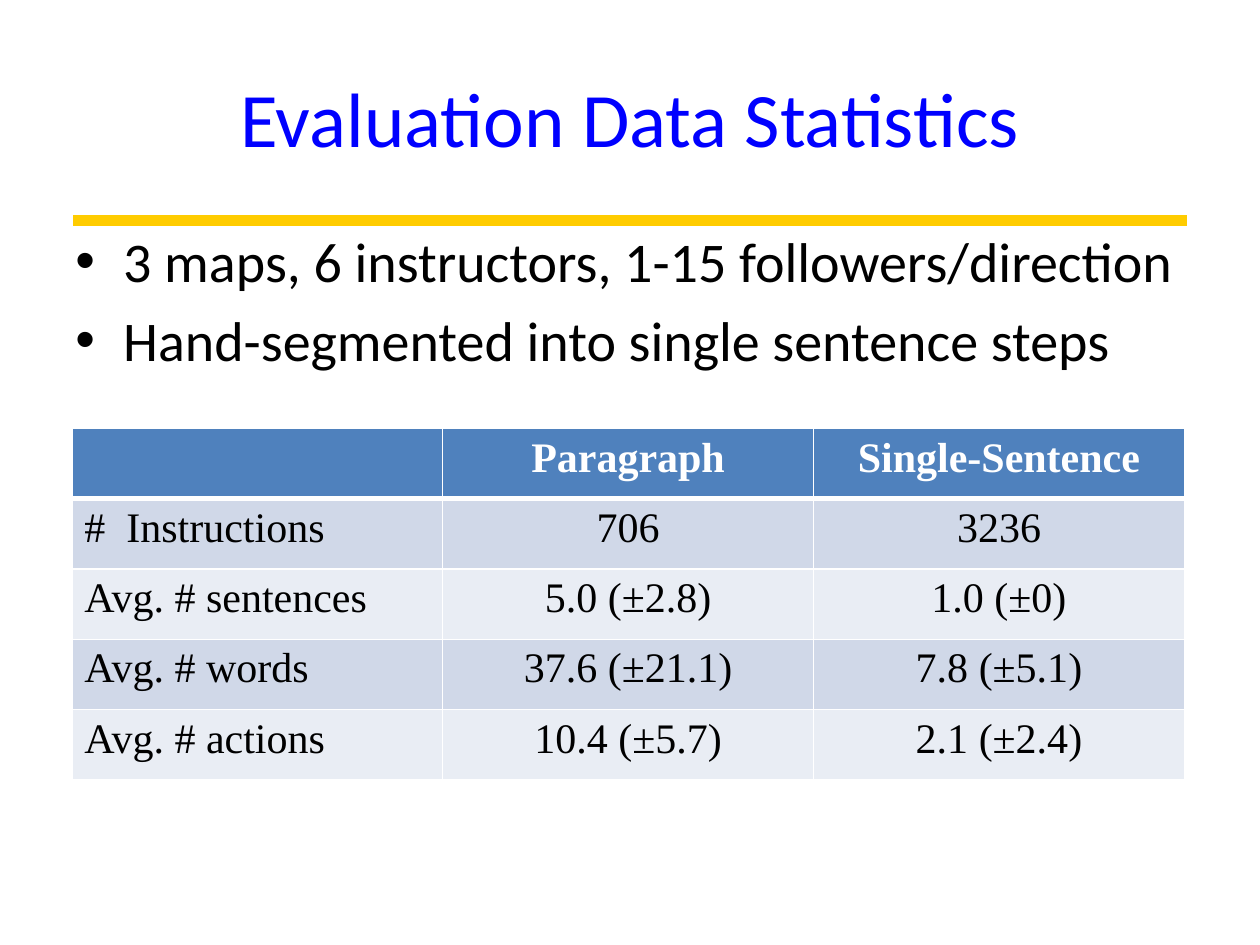
from lxml import etree
from pptx import Presentation
from pptx.dml.color import RGBColor
from pptx.enum.shapes import MSO_CONNECTOR
from pptx.enum.text import MSO_ANCHOR, PP_ALIGN
from pptx.oxml.ns import qn
from pptx.util import Inches, Pt

BLUE = RGBColor(0x00, 0x00, 0xFF)
GOLD = RGBColor(0xFF, 0xCC, 0x00)
BLACK = RGBColor(0x00, 0x00, 0x00)
WHITE = RGBColor(0xFF, 0xFF, 0xFF)
HEADER = RGBColor(0x4F, 0x81, 0xBD)
BANDS = [RGBColor(0xD0, 0xD8, 0xE8), RGBColor(0xE9, 0xED, 0xF4)]

BULLETS = [
    "3 maps, 6 instructors, 1-15 followers/direction",
    "Hand-segmented into single sentence steps",
]
STATISTICS = [
    ["", "Paragraph", "Single-Sentence"],
    ["#  Instructions", "706", "3236"],
    ["Avg. # sentences", "5.0 (±2.8)", "1.0 (±0)"],
    ["Avg. # words", "37.6 (±21.1)", "7.8 (±5.1)"],
    ["Avg. # actions", "10.4 (±5.7)", "2.1 (±2.4)"],
]


def style_font(font, name, size, color, bold=False):
    font.name = name
    font.size = Pt(size)
    font.color.rgb = color
    font.bold = bold


def add_text(s, left, top, width, height, lines, size, color):
    sp = s.shapes.add_textbox(Inches(left), Inches(top), Inches(width), Inches(height))
    tf = sp.text_frame
    tf.word_wrap = True
    tf.text = "\n".join(lines)
    for p in tf.paragraphs:
        for r in p.runs:
            style_font(r.font, "Calibri", size, color)
    return tf


def add_bullet(p):
    p.space_before = Pt(6.4)
    pPr = p._p.get_or_add_pPr()
    pPr.set("marL", str(Inches(0.38)))
    pPr.set("indent", str(-Inches(0.38)))
    etree.SubElement(pPr, qn("a:buFont"), typeface="Arial")
    etree.SubElement(pPr, qn("a:buChar"), char="•")


def add_rule(s, left, right, y):
    line = s.shapes.add_connector(
        MSO_CONNECTOR.STRAIGHT, Inches(left), Inches(y), Inches(right), Inches(y))
    line.line.color.rgb = GOLD
    line.line.width = Pt(6)
    etree.SubElement(line._element.spPr, qn("a:effectLst"))


def set_borders(cell, top, bottom):
    tcPr = cell._tc.get_or_add_tcPr()
    for side, width in (("L", 1), ("R", 1), ("T", top), ("B", bottom)):
        ln = etree.SubElement(tcPr, qn(f"a:ln{side}"), w=str(Pt(width)))
        fill = etree.SubElement(ln, qn("a:solidFill"))
        etree.SubElement(fill, qn("a:srgbClr"), val=str(WHITE))


def add_statistics(s, left, top, width, height):
    rows, cols = len(STATISTICS), len(STATISTICS[0])
    table = s.shapes.add_table(
        rows, cols, Inches(left), Inches(top), Inches(width), Inches(height)).table
    for i, values in enumerate(STATISTICS):
        is_header = i == 0
        for j, value in enumerate(values):
            cell = table.cell(i, j)
            # Borders come before the fill in the cell properties
            set_borders(cell, top=3 if i == 1 else 1, bottom=3 if is_header else 1)
            cell.fill.solid()
            cell.fill.fore_color.rgb = HEADER if is_header else BANDS[(i - 1) % 2]
            cell.text = value
            p = cell.text_frame.paragraphs[0]
            p.alignment = PP_ALIGN.LEFT if j == 0 else PP_ALIGN.CENTER
            for r in p.runs:
                style_font(r.font, "Times New Roman", 24,
                           WHITE if is_header else BLACK, is_header)


def main():
    prs = Presentation()
    prs.slide_width, prs.slide_height = Inches(10), Inches(7.5)
    s = prs.slides.add_slide(prs.slide_layouts[6])

    # Title and rule
    tf = add_text(s, 0.5, 0.3, 9, 1.25, ["Evaluation Data Statistics"], 44, BLUE)
    tf.vertical_anchor = MSO_ANCHOR.MIDDLE
    tf.paragraphs[0].alignment = PP_ALIGN.CENTER
    add_rule(s, 0.58, 9.42, 1.75)

    # Bullets
    tf = add_text(s, 0.5, 1.75, 9, 1.67, BULLETS, 32, BLACK)
    for p in tf.paragraphs:
        add_bullet(p)

    # Statistics table
    add_statistics(s, 0.57, 3.4, 8.83, 2.79)

    prs.save("out.pptx")


if __name__ == "__main__":
    main()
